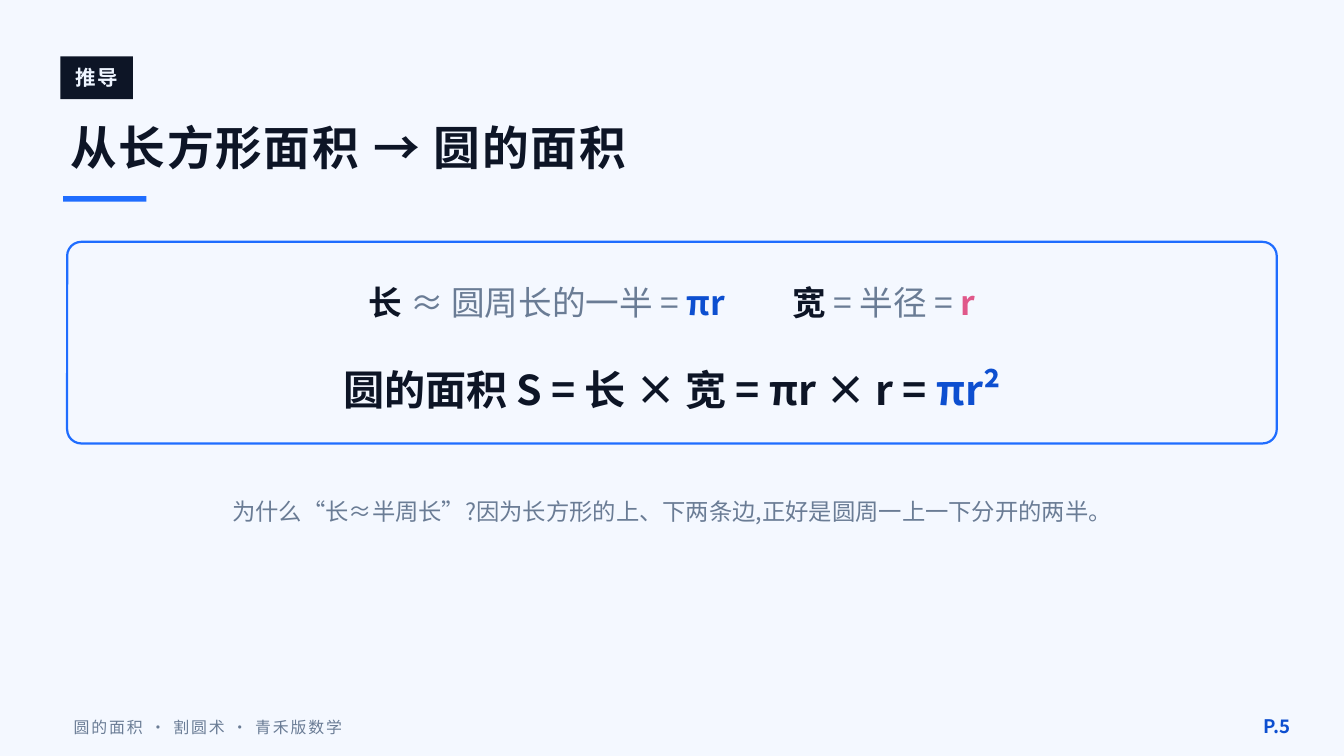
from lxml import etree
from pptx import Presentation
from pptx.dml.color import RGBColor as RGB
from pptx.enum.shapes import MSO_SHAPE as SHAPE
from pptx.enum.text import MSO_ANCHOR as ANCHOR, PP_ALIGN as ALIGN
from pptx.oxml.ns import qn
from pptx.util import Pt

FONT = "Noto Sans CJK SC"
COLORS = {
    "paper": "F4F8FF",
    "ink": "0D1526",
    "tag": "EEF5FF",
    "accent": "1F6DFF",
    "blue": "0D4FD0",
    "pink": "E0588A",
    "muted": "6A7C95",
}


def color(name):
    return RGB.from_string(COLORS[name])


def add_run(p, text, size=18, fill="ink", bold=False, spacing=0):
    """Append a run; size and letter spacing are in points."""
    r = p.add_run()
    r.text = text
    font = r.font
    font.size, font.bold, font.name = Pt(size), bold, FONT
    font.color.rgb = color(fill)
    rPr = r._r.get_or_add_rPr()
    etree.SubElement(rPr, qn("a:ea"), typeface=FONT)
    if spacing:
        rPr.set("spc", str(round(spacing * 100)))


class SlideBuilder:
    """Holds the current slide; every box is (left, top, width, height) in points."""

    def __init__(self, prs):
        self.s = prs.slides.add_slide(prs.slide_layouts[6])
        fill = self.s.background.fill
        fill.solid()
        fill.fore_color.rgb = color("paper")

    def shape(self, box, fill, kind=SHAPE.RECTANGLE, line=None, radius=None):
        sp = self.s.shapes.add_shape(kind, *map(Pt, box))
        sp.shadow.inherit = False
        sp.fill.solid()
        sp.fill.fore_color.rgb = color(fill)
        if line:
            sp.line.color.rgb = color(line)
            sp.line.width = Pt(1.2)
        else:
            sp.line.fill.background()
        if radius is not None:
            sp.adjustments[0] = radius

    def text(self, box, *runs, align=ALIGN.LEFT, margin=7.2, **base):
        """Add one line of (text, format) runs; base holds their shared format."""
        tf = self.s.shapes.add_textbox(*map(Pt, box)).text_frame
        tf.word_wrap = True
        tf.vertical_anchor = ANCHOR.MIDDLE
        tf.margin_left = tf.margin_right = Pt(margin)
        p = tf.paragraphs[0]
        p.alignment = align
        for text, fmt in runs:
            add_run(p, text, **{**base, **fmt})


def main():
    prs = Presentation()
    prs.slide_width, prs.slide_height = Pt(720), Pt(405)
    slide = SlideBuilder(prs)

    # Heading
    slide.shape((32.4, 30.2, 38.9, 23), "ink")
    slide.text((32.4, 29, 38.9, 24.5), ("推导", {}), align=ALIGN.CENTER,
               margin=0, size=11, fill="tag", bold=True, spacing=1)
    slide.text((30.6, 56.2, 648, 44.6), ("从长方形面积 → 圆的面积", {}),
               size=25, bold=True, spacing=1)
    slide.shape((33.8, 105.1, 44.6, 3), "accent")

    # Formula card
    slide.shape((36, 129.6, 648, 108), "paper", SHAPE.ROUNDED_RECTANGLE,
                line="accent", radius=0.07)
    strong = {"bold": True}
    muted = {"fill": "muted"}
    slide.text((50.4, 144, 619.2, 36),
               ("长 ", strong),
               ("≈ 圆周长的一半 = ", muted),
               ("πr", {"fill": "blue", "bold": True}),
               ("　", {"spacing": 18}),
               ("宽 ", strong),
               ("= 半径 = ", muted),
               ("r", {"fill": "pink", "bold": True}),
               align=ALIGN.CENTER, size=18)
    slide.text((50.4, 188.6, 619.2, 39.6),
               ("圆的面积 S = 长 × 宽 = πr × r = ", {}),
               ("πr²", {"fill": "blue"}),
               align=ALIGN.CENTER, size=22, bold=True)

    # Explanation and footer
    slide.text((43.2, 255.6, 633.6, 36),
               ("为什么“长≈半周长”?因为长方形的上、下两条边,正好是圆周一上一下分开的两半。", {}),
               align=ALIGN.CENTER, size=12.5, fill="muted")
    slide.text((32.4, 378.7, 432, 21.6), ("圆的面积 · 割圆术 · 青禾版数学", {}),
               size=8.5, fill="muted", spacing=1)
    slide.text((655.2, 377.3, 43.2, 23), ("P.5", {}),
               align=ALIGN.RIGHT, size=10, fill="blue", bold=True)

    prs.save("out.pptx")


if __name__ == "__main__":
    main()
